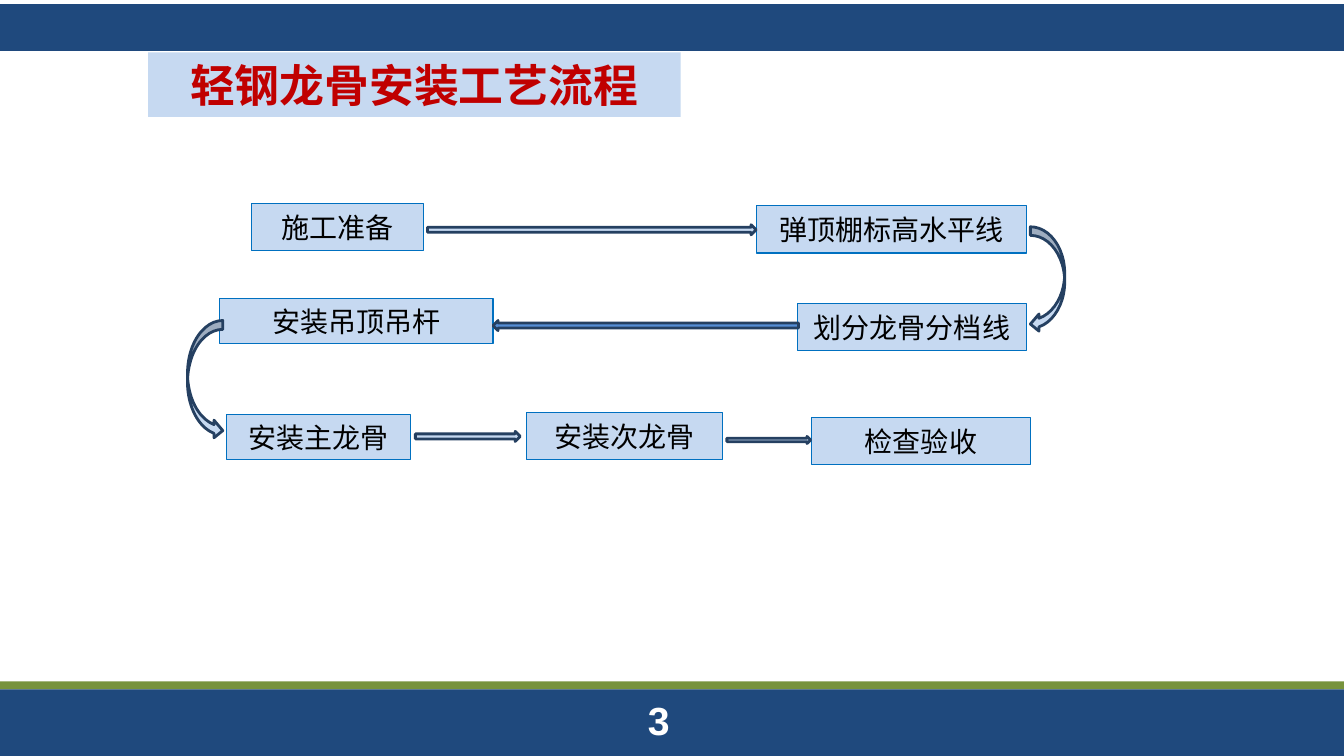
from dataclasses import dataclass

from lxml import etree
from pptx import Presentation
from pptx.dml.color import RGBColor
from pptx.enum import shapes, text
from pptx.oxml import ns
from pptx.util import Inches, Pt

KIND = shapes.MSO_SHAPE


@dataclass(frozen=True)
class Theme:
    navy: str = "1F497D"
    green: str = "77933C"
    pale: str = "C6D9F1"
    blue: str = "558ED5"
    edge: str = "0070C0"
    dark: str = "254061"
    red: str = "C00000"
    black: str = "000000"
    white: str = "FFFFFF"
    title: int = 32
    number: int = 28
    step: int = 20
    thin: float = 0.75
    thick: float = 2
    han: str = "Noto Sans CJK SC"
    latin: str = "Calibri"
    digit: str = "Arial"


class Deck:
    def __init__(self, theme):
        self.theme = theme
        self.file = Presentation()
        self.file.slide_width = Inches(13.33)
        self.file.slide_height = Inches(7.5)
        self.slide = self.file.slides.add_slide(self.file.slide_layouts[6])

    def shape(self, kind, box, fill, line=None, weight=0):
        item = self.slide.shapes.add_shape(kind, *map(Inches, box))
        item.shadow.inherit = False
        item.fill.solid()
        item.fill.fore_color.rgb = RGBColor.from_string(fill)
        if line:
            item.line.color.rgb = RGBColor.from_string(line)
            item.line.width = Pt(weight)
        else:
            item.line.fill.background()
        return item

    def label(self, item, words, size, color, face, bold=False):
        """Centre one line of text in a shape, with Chinese glyphs in the han font."""
        frame = item.text_frame
        frame.vertical_anchor = text.MSO_ANCHOR.MIDDLE
        para = frame.paragraphs[0]
        para.text = words
        para.alignment = text.PP_ALIGN.CENTER
        font = para.font
        font.name, font.size, font.bold = face, Pt(size), bold
        font.color.rgb = RGBColor.from_string(color)
        props = para._p.pPr.find(ns.qn("a:defRPr"))
        etree.SubElement(props, ns.qn("a:ea"), typeface=self.theme.han)

    def bar(self, top, height, fill, line=None):
        self.shape(KIND.RECTANGLE, (0, top, 13.33, height), fill, line, self.theme.thick)

    def title(self, words, box):
        t = self.theme
        item = self.shape(KIND.RECTANGLE, box, t.pale)
        self.label(item, words, t.title, t.red, t.han, True)

    def step(self, words, box):
        t = self.theme
        item = self.shape(KIND.FLOWCHART_PROCESS, box, t.pale, t.edge, t.thin)
        self.label(item, words, t.step, t.black, t.latin)

    def arrow(self, kind, box, fill=None):
        t = self.theme
        self.shape(kind, box, fill or t.pale, t.dark, t.thick)

    def number(self, words, box):
        t = self.theme
        item = self.slide.shapes.add_textbox(*map(Inches, box))
        item.text_frame.word_wrap = False
        self.label(item, words, t.number, t.white, t.digit, True)


def main():
    theme = Theme()
    deck = Deck(theme)
    deck.bar(0.05, 0.44, theme.navy, theme.navy)
    deck.bar(6.76, 0.08, theme.green)
    deck.bar(6.84, 0.66, theme.navy)
    deck.number("3", (6.32, 6.86, 0.43, 0.57))

    steps = [
        ("施工准备", (2.49, 2.02, 1.71, 0.47)),
        ("弹顶棚标高水平线", (7.5, 2.04, 2.68, 0.47)),
        ("划分龙骨分档线", (7.91, 3.01, 2.27, 0.47)),
        ("安装吊顶吊杆", (2.18, 2.96, 2.71, 0.45)),
        ("安装主龙骨", (2.25, 4.11, 1.82, 0.45)),
        ("安装次龙骨", (5.22, 4.09, 1.95, 0.47)),
        ("检查验收", (8.05, 4.14, 2.17, 0.47)),
    ]
    for words, box in steps:
        deck.step(words, box)

    deck.arrow(KIND.RIGHT_ARROW, (4.24, 2.23, 3.26, 0.1))
    deck.arrow(KIND.CURVED_LEFT_ARROW, (10.22, 2.25, 0.34, 1.05))
    deck.arrow(KIND.LEFT_ARROW, (4.89, 3.18, 3.03, 0.1), theme.blue)
    deck.arrow(KIND.CURVED_RIGHT_ARROW, (1.86, 3.18, 0.35, 1.18))
    deck.arrow(KIND.RIGHT_ARROW, (4.12, 4.28, 1.04, 0.1))
    deck.arrow(KIND.RIGHT_ARROW, (7.21, 4.33, 0.83, 0.07))

    deck.title("轻钢龙骨安装工艺流程", (1.47, 0.52, 5.28, 0.64))
    deck.file.save("out.pptx")


if __name__ == "__main__":
    main()
